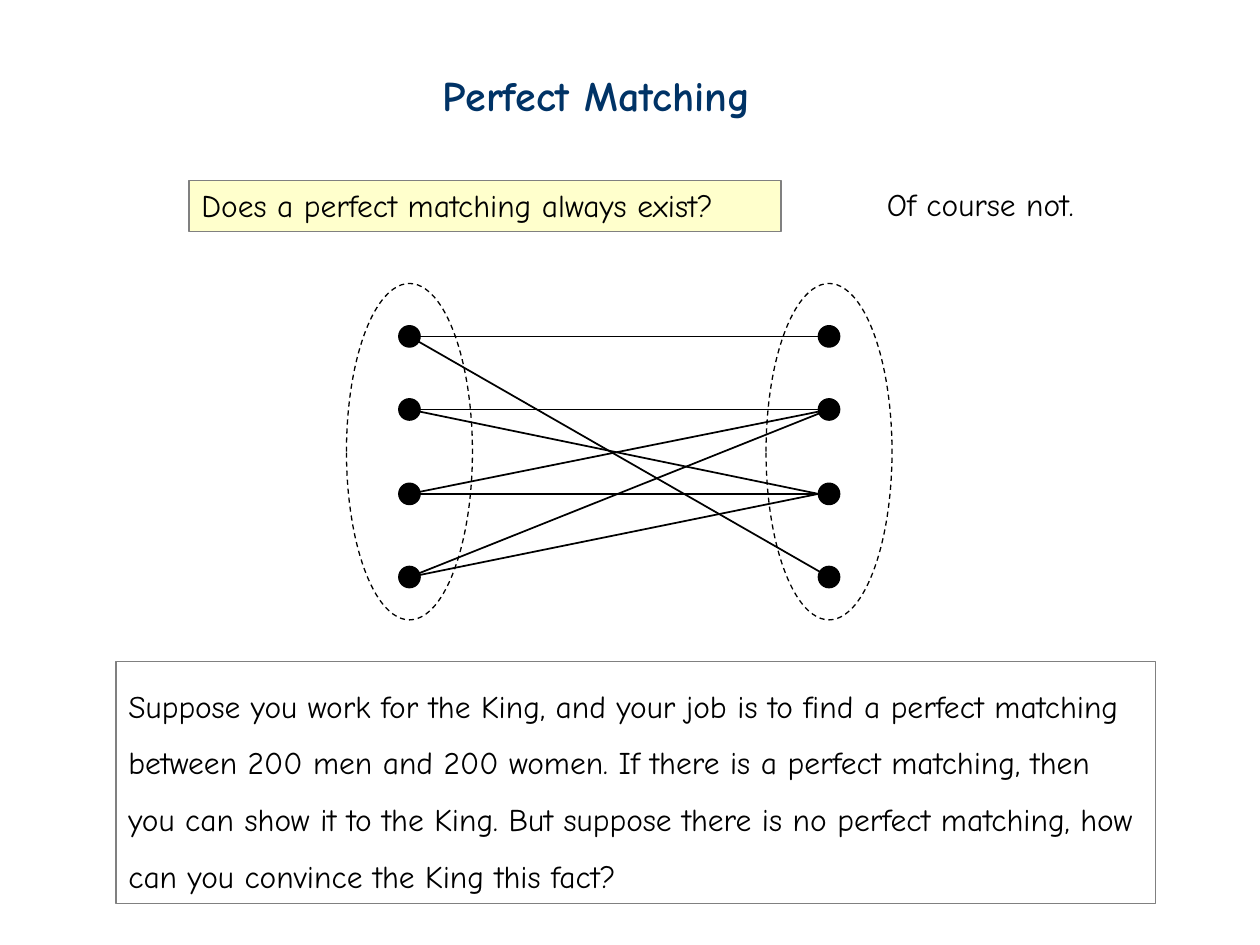
from lxml import etree
from pptx import Presentation
from pptx.dml.color import RGBColor
from pptx.enum.dml import MSO_LINE
from pptx.enum.shapes import MSO_CONNECTOR, MSO_SHAPE
from pptx.enum.text import MSO_ANCHOR, MSO_AUTO_SIZE, PP_ALIGN
from pptx.oxml.ns import qn
from pptx.util import Inches, Pt

RECTANGLE = MSO_SHAPE.RECTANGLE
OVAL = MSO_SHAPE.OVAL
STRAIGHT = MSO_CONNECTOR.STRAIGHT
DASH = MSO_LINE.DASH
TOP = MSO_ANCHOR.TOP
LEFT = PP_ALIGN.LEFT
NO_AUTOFIT = MSO_AUTO_SIZE.NONE

THEME = {
    "font": "Comic Neue",
    "title_size": Pt(24),
    "body_size": Pt(18),
    "title": RGBColor(0x00, 0x33, 0x66),
    "ink": RGBColor(0x00, 0x00, 0x00),
    "border": RGBColor(0x80, 0x80, 0x80),
    "highlight": RGBColor(0xFF, 0xFF, 0xCC),
    "outline": Pt(0.75),
    "edge": Pt(1),
}


def write(holder, text, size, color, wrap=False, bold=False, spacing=1.0):
    frame = holder.text_frame
    frame.auto_size = NO_AUTOFIT
    frame.word_wrap = wrap
    frame.vertical_anchor = TOP
    paragraph = frame.paragraphs[0]
    paragraph.alignment = LEFT
    paragraph.line_spacing = spacing
    run = paragraph.add_run()
    run.text = text
    run.font.name = THEME["font"]
    run.font.size = size
    run.font.bold = bold
    run.font.color.rgb = color


def add_figure(kind, left, top, width, height, line, fill=None):
    figure = slide.shapes.add_shape(
        kind, Inches(left), Inches(top), Inches(width), Inches(height)
    )
    figure.shadow.inherit = False
    if fill is None:
        figure.fill.background()
    else:
        figure.fill.solid()
        figure.fill.fore_color.rgb = fill
    figure.line.color.rgb = line
    figure.line.width = THEME["outline"]
    return figure


prs = Presentation()
prs.slide_width = Inches(10)
prs.slide_height = Inches(7.5)
slide = prs.slides.add_slide(prs.slide_layouts[5])

title = slide.shapes.title
title.left, title.top = Inches(3.41), Inches(0.5)
title.width, title.height = Inches(3), Inches(0.5)
write(title, "Perfect Matching", THEME["title_size"], THEME["title"], bold=True)

question = add_figure(RECTANGLE, 1.5, 1.43, 4.7, 0.41, THEME["border"], THEME["highlight"])
write(question, "Does a perfect matching always exist?", THEME["body_size"], THEME["ink"])

MEN_X, WOMEN_X = 3.25, 6.58
ROWS = [2.67, 3.25, 3.92, 4.58]
DOT = 0.17
GROUP_WIDTH, GROUP_HEIGHT = 1, 2.67
MATCHES = [(0, 0), (0, 3), (1, 1), (2, 1), (3, 1), (1, 2), (2, 2), (3, 2)]
WOMEN_ENDS = [WOMEN_X, WOMEN_X, WOMEN_X - DOT / 2, WOMEN_X]

for man, woman in MATCHES:
    edge = slide.shapes.add_connector(
        STRAIGHT,
        Inches(MEN_X),
        Inches(ROWS[man]),
        Inches(WOMEN_ENDS[woman]),
        Inches(ROWS[woman]),
    )
    edge.line.color.rgb = THEME["ink"]
    edge.line.width = THEME["edge"]
    etree.SubElement(edge._element.spPr, qn("a:effectLst"))

for x in (MEN_X, WOMEN_X):
    for y in ROWS:
        add_figure(OVAL, x - DOT / 2, y - DOT / 2, DOT, DOT, THEME["ink"], THEME["ink"])

for x in (MEN_X, WOMEN_X):
    group = add_figure(OVAL, x - GROUP_WIDTH / 2, 2.25, GROUP_WIDTH, GROUP_HEIGHT, THEME["ink"])
    group.line.dash_style = DASH

answer = slide.shapes.add_textbox(Inches(6.94), Inches(1.42), Inches(1.89), Inches(0.4))
write(answer, "Of course not.", THEME["body_size"], THEME["ink"])

challenge = add_figure(RECTANGLE, 0.92, 5.25, 8.25, 1.92, THEME["border"])
write(
    challenge,
    "Suppose you work for the King, and your job is to find a perfect matching "
    "between 200 men and 200 women. If there is a perfect matching, then you can "
    "show it to the King. But suppose there is no perfect matching, how can you "
    "convince the King this fact?",
    THEME["body_size"],
    THEME["ink"],
    wrap=True,
    spacing=1.5,
)

prs.save("out.pptx")
